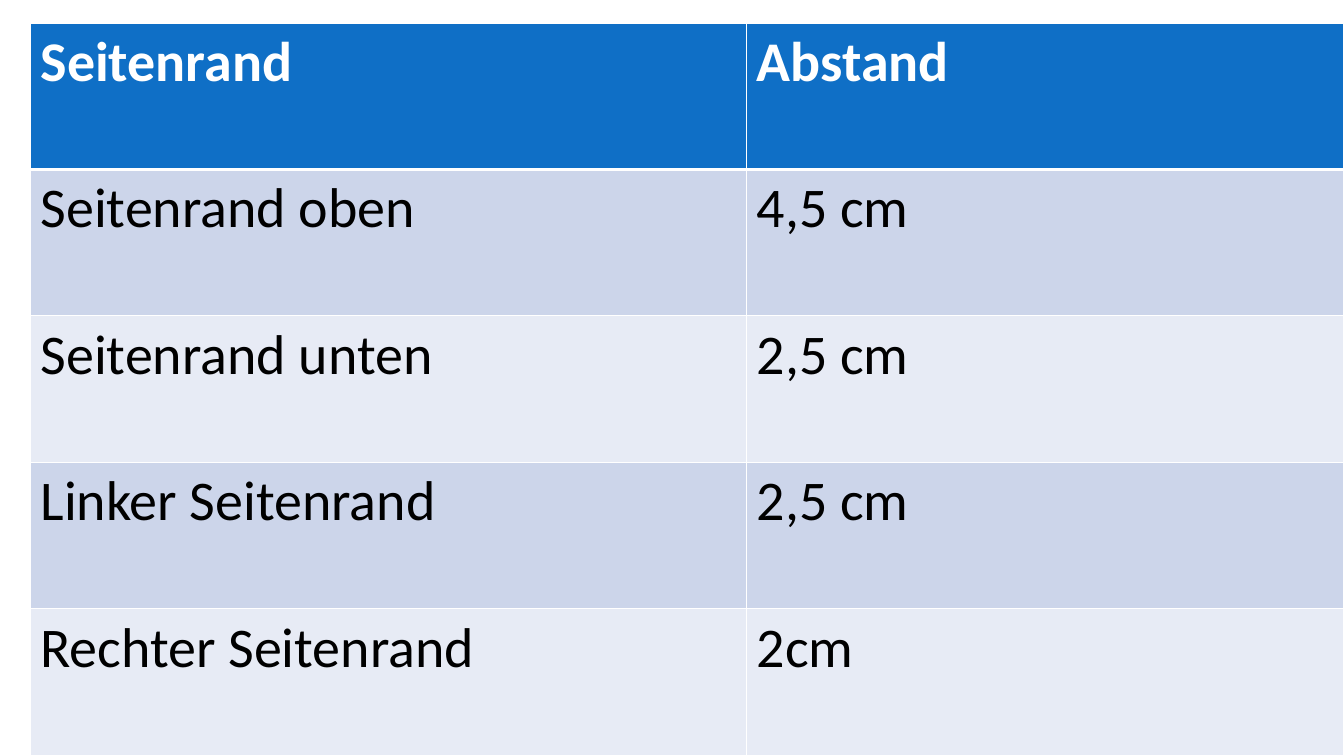
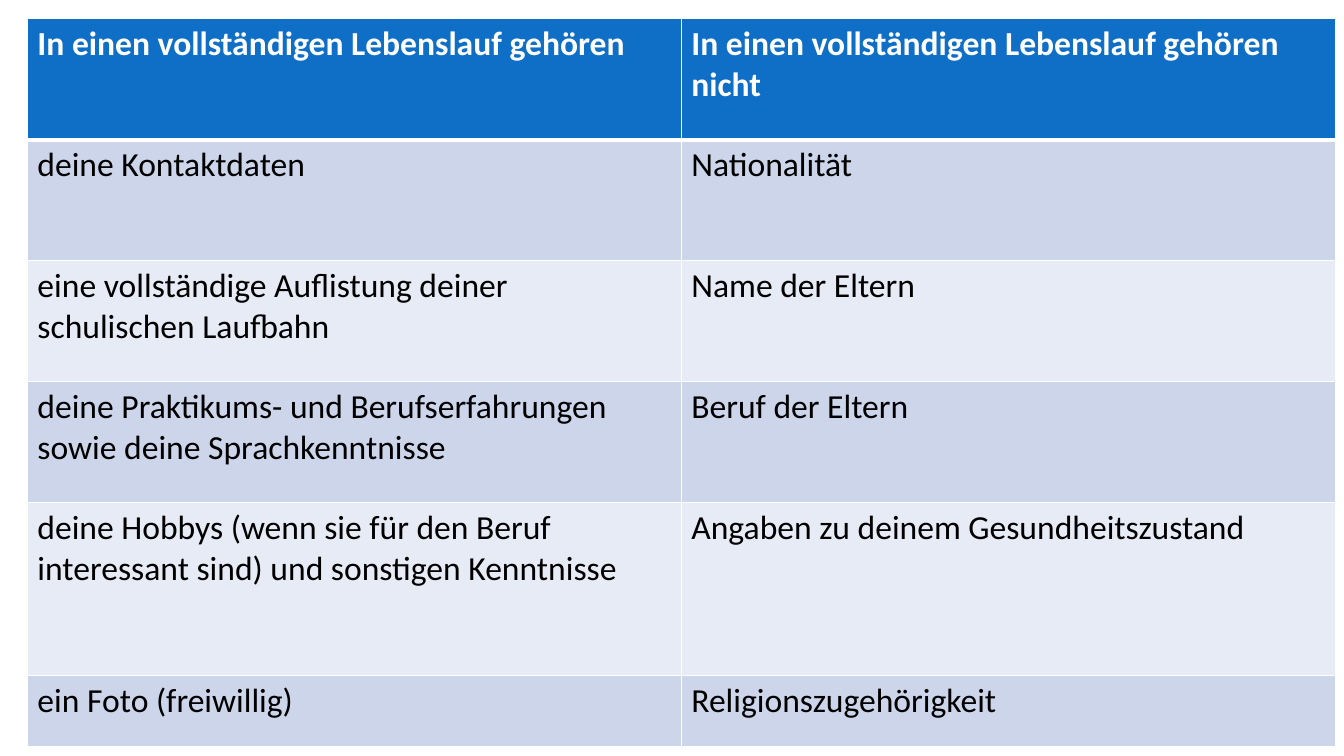
from pptx import Presentation
from pptx.dml.color import RGBColor
from pptx.oxml.ns import qn
from pptx.util import Cm, Pt
from lxml.etree import SubElement

FONT = "Calibri"
WHITE, BLACK = "FFFFFF", "000000"
HEADER_FILL = "0F6FC6"
BAND_FILLS = ("CCD5EA", "E7EBF5")

MARGINS = [
    ("Seitenrand", "Abstand"),
    ("Seitenrand oben", "4,5 cm"),
    ("Seitenrand unten", "2,5 cm"),
    ("Linker Seitenrand", "2,5 cm"),
    ("Rechter Seitenrand", "2cm"),
]
CV_CONTENT = [
    ("In einen vollständigen Lebenslauf gehören",
     "In einen vollständigen Lebenslauf gehören nicht"),
    ("deine Kontaktdaten", "Nationalität"),
    ("eine vollständige Auflistung deiner schulischen Laufbahn",
     "Name der Eltern"),
    ("deine Praktikums- und Berufserfahrungen sowie deine Sprachkenntnisse",
     "Beruf der Eltern"),
    ("deine Hobbys (wenn sie für den Beruf interessant sind) "
     "und sonstigen Kenntnisse",
     "Angaben zu deinem Gesundheitszustand"),
    ("ein Foto (freiwillig)", "Religionszugehörigkeit"),
]


def rgb(color):
    return RGBColor.from_string(color)


def set_borders(cell, top, bottom):
    """Draw white borders; top and bottom are widths in points."""
    tc_pr = cell._tc.get_or_add_tcPr()
    for side, width in (("L", 1), ("R", 1), ("T", top), ("B", bottom)):
        ln = SubElement(tc_pr, qn(f"a:ln{side}"), w=str(Pt(width)))
        fill = SubElement(ln, qn("a:solidFill"))
        SubElement(fill, qn("a:srgbClr"), val=WHITE)


def format_cell(cell, text, row, size):
    header = row == 0
    set_borders(cell, top=3 if row == 1 else 1, bottom=3 if header else 1)
    cell.fill.solid()
    cell.fill.fore_color.rgb = rgb(
        HEADER_FILL if header else BAND_FILLS[(row - 1) % 2])
    cell.text_frame.text = text
    font = cell.text_frame.paragraphs[0].runs[0].font
    font.name, font.size, font.bold = FONT, Pt(size), header
    font.color.rgb = rgb(WHITE if header else BLACK)


def add_table_slide(prs, rows, left, top, widths, heights, size):
    """Add a slide with one banded table; lengths are in centimetres."""
    s = prs.slides.add_slide(prs.slide_layouts[6])
    table = s.shapes.add_table(
        len(rows), len(widths), Cm(left), Cm(top),
        Cm(sum(widths)), Cm(sum(heights))).table
    for column, width in zip(table.columns, widths):
        column.width = Cm(width)
    for i, (texts, height) in enumerate(zip(rows, heights)):
        table.rows[i].height = Cm(height)
        for j, text in enumerate(texts):
            format_cell(table.cell(i, j), text, i, size)


def main():
    prs = Presentation()
    prs.slide_width, prs.slide_height = Cm(33.87), Cm(19.05)
    add_table_slide(prs, MARGINS, 0.77, 0.58, [18.05, 15.05],
                    [3.69] * len(MARGINS), 40)
    add_table_slide(prs, CV_CONTENT, 0.69, 0.47, [16.48] * 2,
                    [3.05] * 4 + [4.36, 1.78], 24)
    prs.save("out.pptx")


if __name__ == "__main__":
    main()
